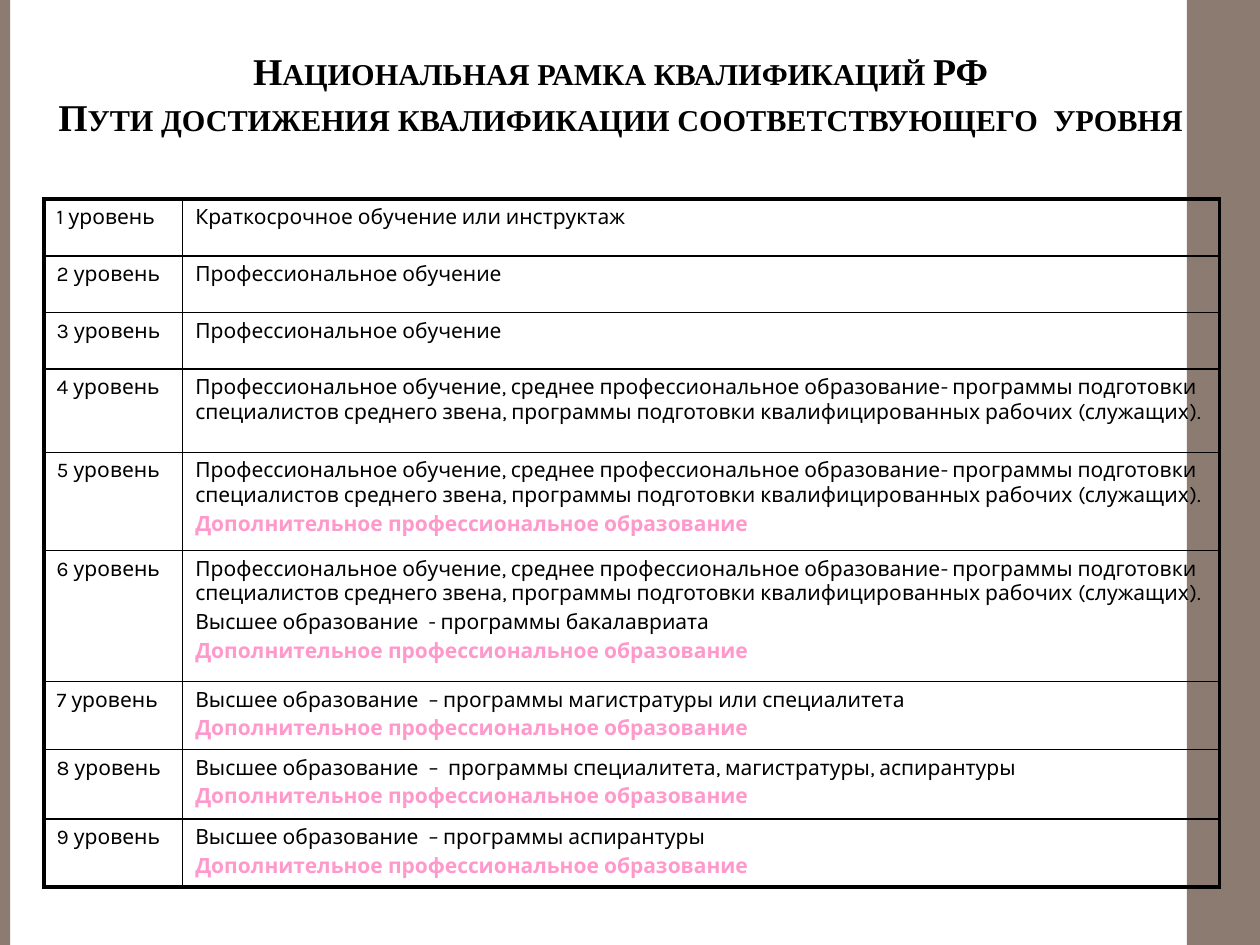
from lxml.etree import SubElement
from pptx import Presentation
from pptx.dml.color import RGBColor
from pptx.enum.shapes import MSO_SHAPE
from pptx.enum.text import MSO_ANCHOR, PP_ALIGN
from pptx.oxml.ns import qn
from pptx.util import Inches, Pt

BLACK = RGBColor(0x00, 0x00, 0x00)
PINK = RGBColor(0xFF, 0x99, 0xCC)
TAUPE = RGBColor(0x8C, 0x7B, 0x70)

OUTER, INNER = Pt(2.25), Pt(1)

HEADING = ("Национальная рамка квалификаций РФ\v"
           "Пути достижения квалификации соответствующего  уровня")
TRAINING = "Профессиональное обучение"
VOCATIONAL = (TRAINING + ", среднее профессиональное образование- программы подготовки "
              "специалистов среднего звена, программы подготовки квалифицированных "
              "рабочих (служащих).")
HIGHER = "Высшее образование  "
ADDITIONAL = "Дополнительное профессиональное образование"

LEVELS = [
    (0.45, ["Краткосрочное обучение или инструктаж"]),
    (0.45, [TRAINING]),
    (0.45, [TRAINING]),
    (0.66, [VOCATIONAL]),
    (0.78, [VOCATIONAL, ADDITIONAL]),
    (1.04, [VOCATIONAL, HIGHER + "- программы бакалавриата", ADDITIONAL]),
    (0.54, [HIGHER + "– программы магистратуры или специалитета", ADDITIONAL]),
    (0.55, [HIGHER + "–  программы специалитета, магистратуры, аспирантуры", ADDITIONAL]),
    (0.54, [HIGHER + "– программы аспирантуры", ADDITIONAL]),
]
COLUMN_WIDTHS = (1.1, 8.23)


def add_side_band(slide, left, top, width, height):
    """Place a plain vertical band at the edge of the slide."""
    band = slide.shapes.add_shape(MSO_SHAPE.RECTANGLE, left, top, width, height)
    band.shadow.inherit = False
    band.fill.solid()
    band.fill.fore_color.rgb = TAUPE
    band.line.fill.background()


def add_heading(slide, left, top, width, height):
    """Place the two-line heading in small capitals."""
    frame = slide.shapes.add_textbox(left, top, width, height).text_frame
    frame.word_wrap = True
    frame.vertical_anchor = MSO_ANCHOR.MIDDLE
    heading = frame.paragraphs[0]
    heading.text = HEADING
    heading.alignment = PP_ALIGN.CENTER
    heading.font.name = "Times New Roman"
    heading.font.size = Pt(21.6)
    heading.font.bold = True
    heading.font.color.rgb = BLACK
    for run in heading.runs:
        run._r.get_or_add_rPr().set("cap", "small")


def set_borders(cell, left, right, top, bottom):
    """Draw black borders of the given widths around a cell."""
    properties = cell._tc.get_or_add_tcPr()
    for side, width in zip("LRTB", (left, right, top, bottom)):
        border = SubElement(properties, qn(f"a:ln{side}"), w=str(width))
        color = SubElement(SubElement(border, qn("a:solidFill")), qn("a:srgbClr"))
        color.set("val", str(BLACK))


def write_cell(cell, lines):
    """Write one paragraph per line, with additional education in pink."""
    frame = cell.text_frame
    for index, line in enumerate(lines):
        paragraph = frame.add_paragraph() if index else frame.paragraphs[0]
        paragraph.text = line
        paragraph.space_before = Pt(2.4 if index else 0)
        paragraph.font.name = "Karla"
        paragraph.font.size = Pt(12)
        paragraph.font.bold = line == ADDITIONAL
        paragraph.font.color.rgb = PINK if line == ADDITIONAL else BLACK


def add_levels_table(slide, left, top, width, height):
    """Place the table of qualification levels and the paths to them."""
    last = len(LEVELS) - 1
    table = slide.shapes.add_table(len(LEVELS), 2, left, top, width, height).table
    table.first_row = False
    table.horz_banding = False
    for column, column_width in zip(table.columns, COLUMN_WIDTHS):
        column.width = Inches(column_width)
    for index, (row_height, paths) in enumerate(LEVELS):
        table.rows[index].height = Inches(row_height)
        upper = OUTER if index == 0 else INNER
        lower = OUTER if index == last else INNER
        level_cell, path_cell = table.rows[index].cells
        set_borders(level_cell, OUTER, INNER, upper, lower)
        set_borders(path_cell, INNER, OUTER, upper, lower)
        write_cell(level_cell, [f"{index + 1} уровень"])
        write_cell(path_cell, paths)
        for cell in (level_cell, path_cell):
            cell.fill.background()


def main():
    """Build the slide and save it."""
    presentation = Presentation()
    presentation.slide_width = Inches(10)
    presentation.slide_height = Inches(7.5)
    slide = presentation.slides.add_slide(presentation.slide_layouts[6])
    add_side_band(slide, Inches(9.42), Inches(0), Inches(0.58), Inches(7.5))
    add_side_band(slide, Inches(0), Inches(0), Inches(0.08), Inches(7.5))
    add_heading(slide, Inches(0.12), Inches(0.13), Inches(9.61), Inches(1.22))
    add_levels_table(slide, Inches(0.35), Inches(1.58), Inches(9.33), Inches(5.47))
    presentation.save("out.pptx")


if __name__ == "__main__":
    main()
